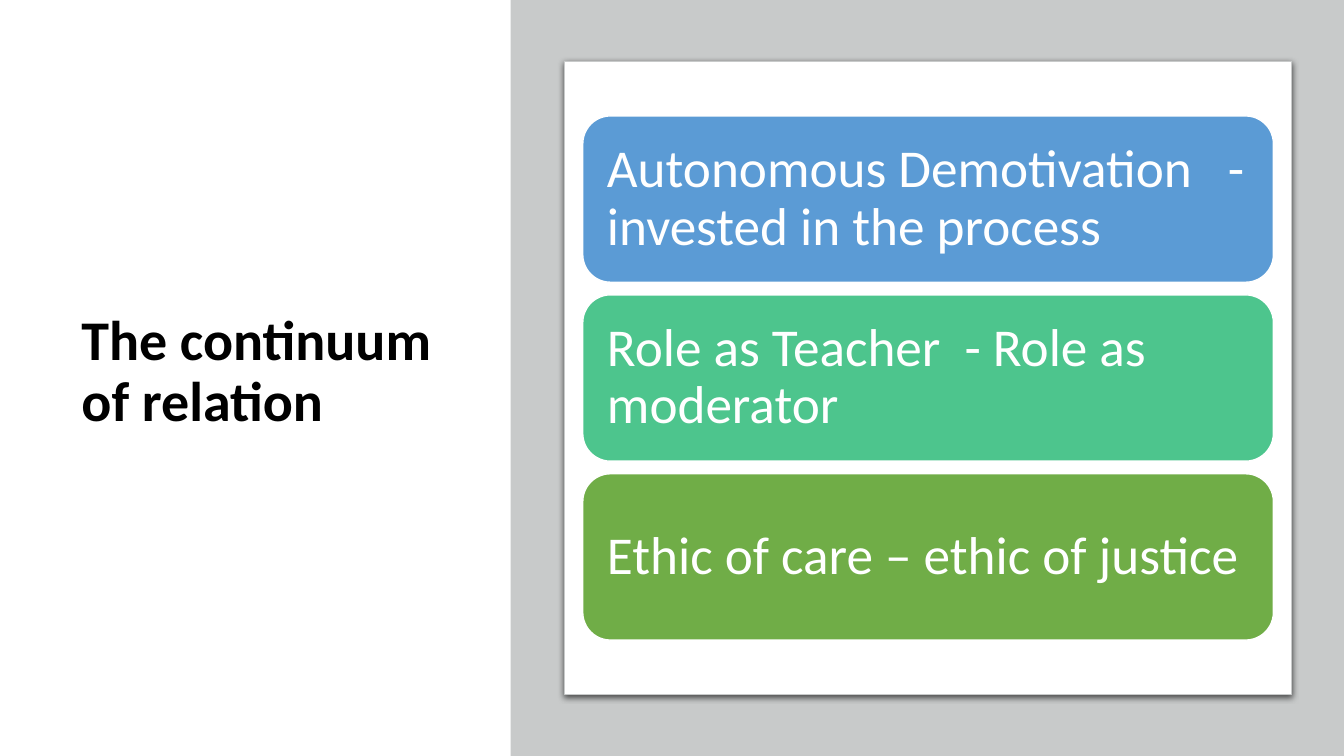
from lxml import etree
from pptx import Presentation
from pptx.dml.color import RGBColor as RGB
from pptx.enum.shapes import MSO_SHAPE as SHAPE
from pptx.enum.text import MSO_ANCHOR as ANCHOR, PP_ALIGN as ALIGN
from pptx.oxml.ns import qn
from pptx.util import Inches, Pt

THEME = dict(font="Calibri", title=40, body=38, ink="000000", paper="FFFFFF",
             grey="C8CACA", cards=("5B9BD5", "4DC58D", "70AD47"))

prs = Presentation()
prs.slide_width, prs.slide_height = Inches(13.33), Inches(7.5)
W, H = prs.slide_width, prs.slide_height
s = prs.slides.add_slide(prs.slide_layouts[6])


def add_box(kind, x, y, w, h, fill, line=None, weight=1):
    sp = s.shapes.add_shape(kind, x, y, w, h)
    sp.shadow.inherit = False
    sp.fill.solid()
    sp.fill.fore_color.rgb = RGB.from_string(fill)
    if line:
        sp.line.color.rgb = RGB.from_string(line)
        sp.line.width = Pt(weight)
    else:
        sp.line.fill.background()
    return sp


def write(sp, text, size, color, bold=False, inset=0.1, inset_y=0.05, after=0):
    tf = sp.text_frame
    tf.word_wrap = True
    tf.vertical_anchor = ANCHOR.MIDDLE
    tf.margin_left = tf.margin_right = Inches(inset)
    tf.margin_top = tf.margin_bottom = Inches(inset_y)
    p = tf.paragraphs[0]
    p.alignment, p.line_spacing, p.space_after = ALIGN.LEFT, 0.9, Pt(after)
    r = p.add_run()
    r.text = text
    r.font.name, r.font.size, r.font.bold = THEME["font"], Pt(size), bold
    r.font.color.rgb = RGB.from_string(color)


# Title on the left
title = s.shapes.add_textbox(Inches(0.71), Inches(0.69), Inches(4.01), Inches(6.02))
write(title, "The continuum of relation", THEME["title"], THEME["ink"], bold=True)

# Grey area and white panel with a soft shadow
split = int(W * 0.38)
add_box(SHAPE.RECTANGLE, split, 0, W - split, H, THEME["grey"])
panel = add_box(SHAPE.RECTANGLE, Inches(5.6), Inches(0.61), Inches(7.21),
                Inches(6.28), THEME["paper"], THEME["grey"], 0.75)
effects = panel._element.spPr.find(qn("a:effectLst"))
shadow = etree.SubElement(effects, qn("a:outerShdw"), blurRad=str(Pt(4.5)),
                          dist=str(Pt(1.5)), dir="5400000", algn="ctr", rotWithShape="0")
tint = etree.SubElement(shadow, qn("a:srgbClr"), val=THEME["ink"])
etree.SubElement(tint, qn("a:alpha"), val="63000")

# Three cards, evenly stacked
cards = ("Autonomous Demotivation   - invested in the process",
         "Role as Teacher  - Role as moderator",
         "Ethic of care – ethic of justice")
top, pitch, height = 1.15, 1.775, 1.65
for i, (text, fill) in enumerate(zip(cards, THEME["cards"])):
    card = add_box(SHAPE.ROUNDED_RECTANGLE, Inches(5.78), Inches(top + i * pitch),
                   Inches(6.85), Inches(height), fill, THEME["paper"])
    # The rounded corners already inset the text by 0.08 inch
    write(card, text, THEME["body"], THEME["paper"], inset=0.16, inset_y=0.16,
          after=0.35 * THEME["body"])

prs.save("out.pptx")
